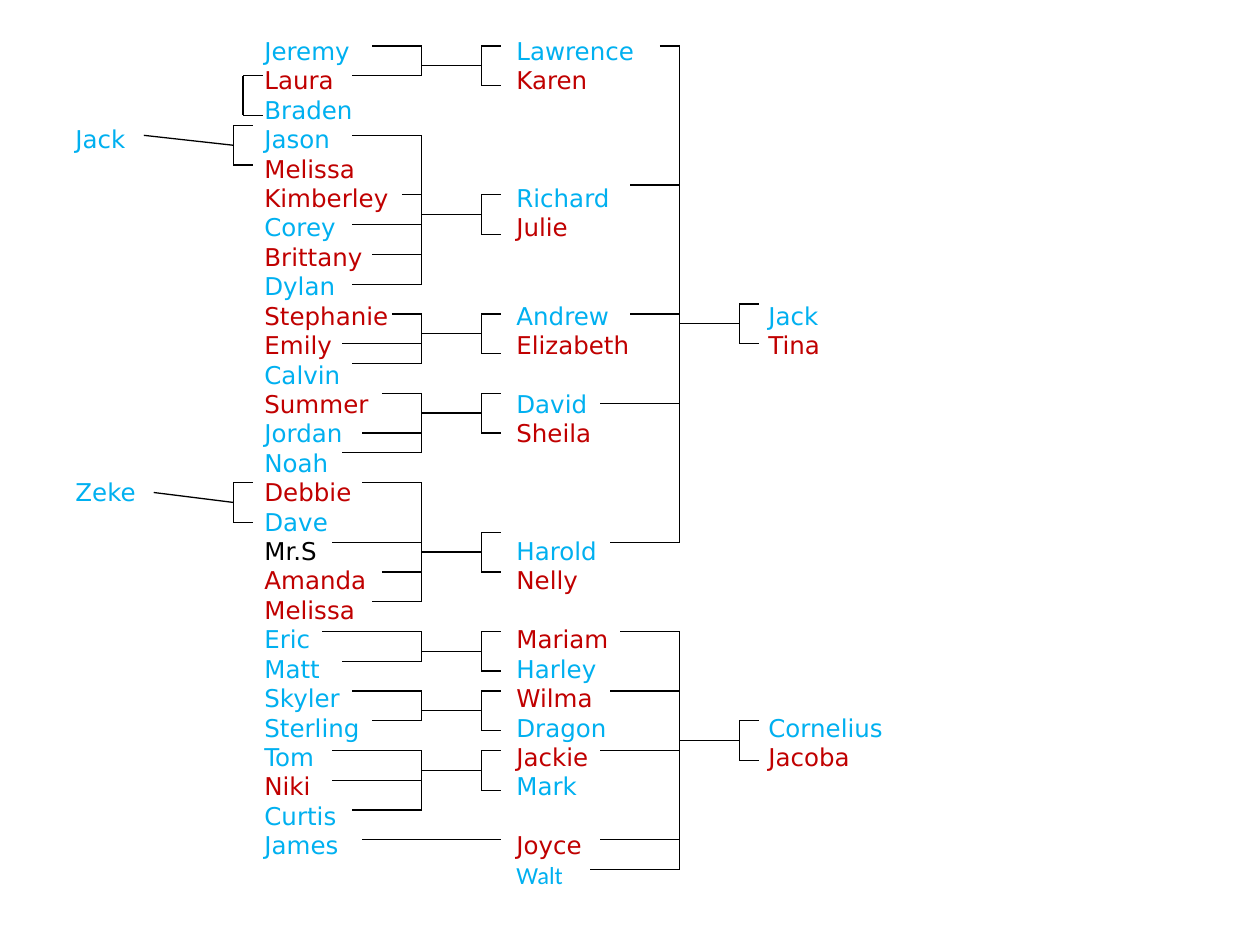
from lxml.etree import SubElement as Sub
from pptx import Presentation as Deck
from pptx.dml.color import RGBColor as Rgb
from pptx.enum.shapes import MSO_CONNECTOR as Link
from pptx.enum.text import MSO_ANCHOR as Anchor, MSO_AUTO_SIZE as Fit
from pptx.oxml.ns import qn
from pptx.util import Pt

STEP = 5.67
INKS = {"b": "00B0F0", "r": "C00000", "k": "000000"}
NAMES = """
|bJeremy|bLawrence
|rLaura|rKaren
|bBraden
bJack|bJason
|rMelissa
|rKimberley|bRichard
|bCorey|rJulie
|rBrittany
|bDylan
|rStephanie|bAndrew|bJack
|rEmily|rElizabeth|rTina
|bCalvin
|rSummer|bDavid
|bJordan|rSheila
|bNoah
bZeke|rDebbie
|bDave
|kMr.S|bHarold
|rAmanda|rNelly
|rMelissa
|bEric|rMariam
|bMatt|bHarley
|bSkyler|rWilma
|bSterling|bDragon|bCornelius
|bTom|rJackie|rJacoba
|rNiki|bMark
|bCurtis
|bJames|rJoyce
||bWalt
"""
CLANS = [
    (28, 0, [(23, 0), (21, 3)]),
    (28, 15, [(21, 9), (26, 15), (21, 18), (23, 21), (21, 24)]),
    (28, 27, [(25, 27), (20, 30), (21, 32)]),
    (28, 35, [(24, 35), (22, 39), (20, 41)]),
    (28, 49, [(22, 44), (19, 50), (24, 53), (23, 56)]),
    (28, 59, [(18, 59), (20, 62)]),
    (28, 65, [(21, 65), (23, 68)]),
    (28, 71, [(19, 71), (19, 74), (21, 77)]),
    (54, 26, [(52, 0), (49, 14), (49, 27), (46, 36), (47, 50)]),
    (54, 68, [(48, 59), (47, 65), (46, 71), (46, 80), (45, 83)]),
]
COUPLES = [(10, 3), (9, 8), (9, 44)]
SINGLES = [(22, 80, 36, 80), (0, 9, 9, 10), (1, 45, 9, 46)]


def tint(code):
    return Rgb.from_string(code)


def add_names(slide, left, top, width, height):
    frame = slide.shapes.add_textbox(Pt(left), Pt(top), Pt(width), Pt(height)).text_frame
    frame.word_wrap = True
    frame.auto_size = Fit.SHAPE_TO_FIT_TEXT
    frame.vertical_anchor = Anchor.MIDDLE
    for i, row in enumerate(NAMES.split()):
        para = frame.add_paragraph() if i else frame.paragraphs[0]
        props = para._p.get_or_add_pPr()
        for key, size in (("marL", 0), ("indent", 36), ("defTabSz", 144)):
            props.set(key, str(Pt(size)))
        para.line_spacing = Pt(16.83)
        tabs = ""
        for name in row.split("|"):
            if name:
                run = para.add_run()
                run.text = tabs + name[1:]
                run.font.size = Pt(14)
                run.font.name = "Calibri" if name == "bWalt" else "DejaVu Sans"
                run.font.color.rgb = tint(INKS[name[0]])
                tabs = ""
            tabs += "\t"


def add_tree(slide, left, top):
    def line(x1, y1, x2, y2):
        wire = slide.shapes.add_connector(
            Link.STRAIGHT,
            Pt(left + x1 * STEP), Pt(top + y1 * STEP),
            Pt(left + x2 * STEP), Pt(top + y2 * STEP))
        wire.line.color.rgb = tint("000000")
        wire.line.width = Pt(0.75)
        Sub(wire._element.spPr, qn("a:effectLst"))

    def fork(x, y):
        line(x, y, x + 2, y)
        line(x, y + 4, x + 2, y + 4)
        line(x, y, x, y + 4)

    for spine, y, kids in CLANS:
        fork(spine + 6, y)
        line(spine, y + 2, spine + 6, y + 2)
        line(spine, kids[0][1], spine, kids[-1][1])
        for kid_x, kid_y in kids:
            line(kid_x, kid_y, spine, kid_y)
    for couple in COUPLES:
        fork(*couple)
    for single in SINGLES:
        line(*single)


def main():
    deck = Deck()
    deck.slide_width, deck.slide_height = Pt(720), Pt(540)
    slide = deck.slides.add_slide(deck.slide_layouts[6])
    add_names(slide, 0, 14.8, 720, 499)
    add_tree(slide, 82.2, 26.3)
    deck.save("out.pptx")


if __name__ == "__main__":
    main()
